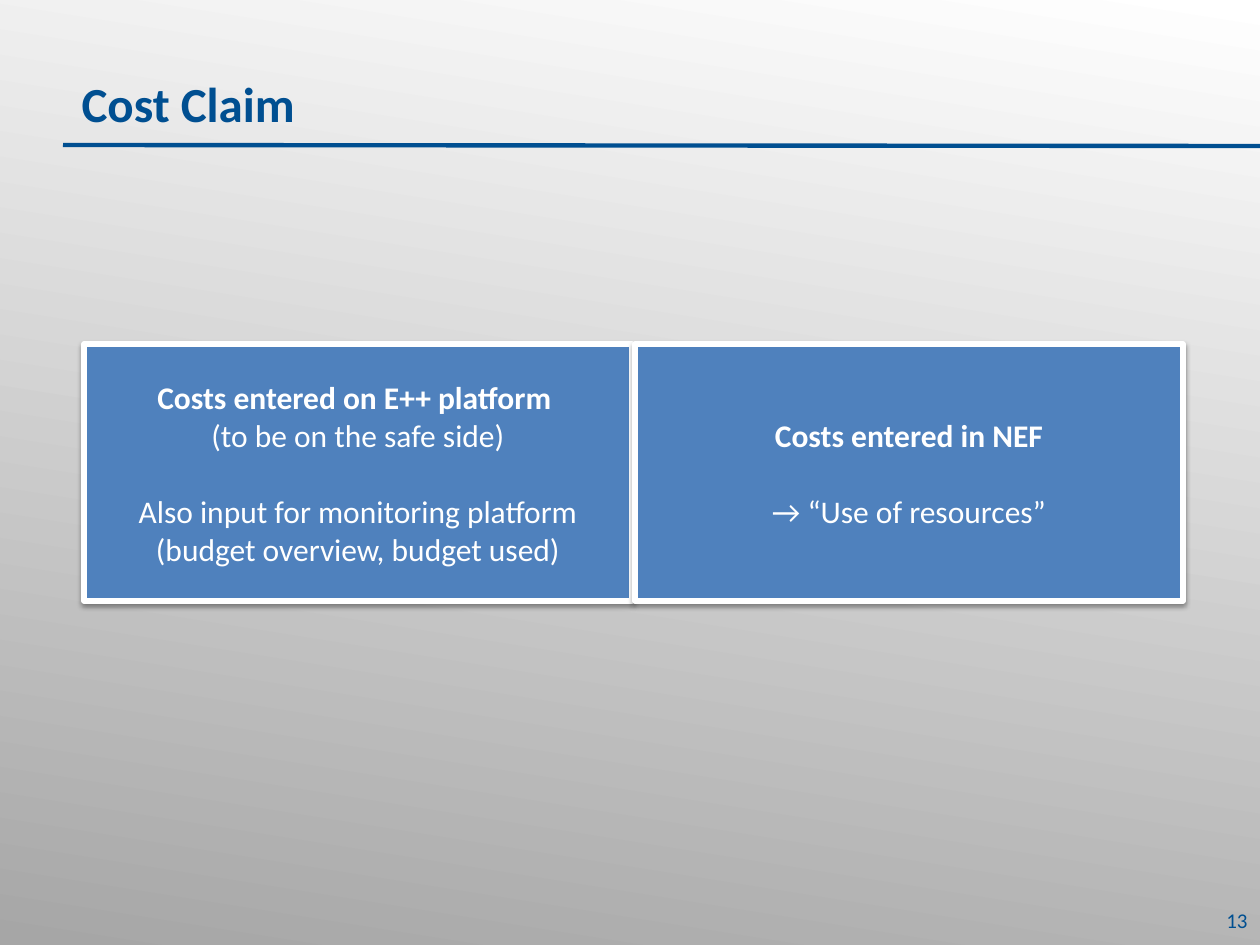
from dataclasses import dataclass

from lxml.etree import SubElement
from pptx import Presentation
from pptx.dml.color import RGBColor
from pptx.enum.shapes import MSO_CONNECTOR, MSO_SHAPE
from pptx.enum.text import MSO_ANCHOR, PP_ALIGN
from pptx.oxml.ns import qn
from pptx.util import Emu, Pt


@dataclass(frozen=True)
class Theme:
    font: str = "Calibri"
    navy: RGBColor = RGBColor(0x00, 0x4F, 0x91)
    blue: RGBColor = RGBColor(0x4F, 0x81, 0xBD)
    white: RGBColor = RGBColor(0xFF, 0xFF, 0xFF)
    gray: RGBColor = RGBColor(0xA6, 0xA6, 0xA6)
    title_size: Pt = Pt(28)
    body_size: Pt = Pt(18)
    number_size: Pt = Pt(12)
    line_gap: Pt = Pt(22)


THEME = Theme()
EMU_PER_PX = 914400 / 126
SLIDE_BOX = (0, 0, 1260, 945)
PANELS = [
    [
        ("Costs entered on E++ platform ", True, False),
        ("(to be on the safe side)", False, False),
        ("Also input for monitoring platform (budget overview, budget used)", False, True),
    ],
    [
        ("Costs entered in NEF", True, False),
        ("→ “Use of resources”", False, True),
    ],
]


def px(length):
    return Emu(round(length * EMU_PER_PX))


def emu_box(box):
    return [px(length) for length in box]


def style_font(paragraph, size, color, bold=False):
    font = paragraph.font
    font.name = THEME.font
    font.size = size
    font.color.rgb = color
    font.bold = bold


def add_soft_shadow(shape):
    effects = shape._element.spPr.find(qn("a:effectLst"))
    shadow = SubElement(
        effects, qn("a:outerShdw"), blurRad=str(Pt(3.1)), dist=str(Pt(1.6)),
        dir="5400000", rotWithShape="0",
    )
    color = SubElement(shadow, qn("a:srgbClr"), val="000000")
    SubElement(color, qn("a:alpha"), val="38000")


def add_backdrop(slide, box):
    backdrop = slide.shapes.add_shape(MSO_SHAPE.RECTANGLE, *emu_box(box))
    backdrop.shadow.inherit = False
    backdrop.line.fill.background()
    backdrop.fill.gradient()
    backdrop.fill.gradient_angle = 261
    for stop, color in zip(backdrop.fill.gradient_stops, (THEME.white, THEME.gray)):
        stop.color.rgb = color
    slide.shapes.title.element.addprevious(backdrop.element)


def add_header(slide, box, text):
    left, top, width, height = box
    title = slide.shapes.title
    title.left, title.top, title.width, title.height = emu_box(
        (left + 6, top, width - 58, height - 4)
    )
    title.text_frame.text = text
    title.text_frame.vertical_anchor = MSO_ANCHOR.TOP
    paragraph = title.text_frame.paragraphs[0]
    paragraph.alignment = PP_ALIGN.LEFT
    paragraph.line_spacing = 0.9
    paragraph.space_after = Pt(12)
    style_font(paragraph, THEME.title_size, THEME.navy, True)

    bottom = top + height
    rule = slide.shapes.add_connector(
        MSO_CONNECTOR.STRAIGHT, *emu_box((left - 0, bottom, left + width, bottom + 1))
    )
    rule.line.color.rgb = THEME.navy
    rule.line.width = Pt(2.5)
    SubElement(rule._element.spPr, qn("a:effectLst"))


def add_panel(slide, box, lines):
    panel = slide.shapes.add_shape(MSO_SHAPE.RECTANGLE, *emu_box(box))
    panel.shadow.inherit = False
    panel.fill.solid()
    panel.fill.fore_color.rgb = THEME.blue
    panel.line.color.rgb = THEME.white
    panel.line.width = Pt(3)
    add_soft_shadow(panel)
    frame = panel.text_frame
    frame.word_wrap = True
    frame.vertical_anchor = MSO_ANCHOR.MIDDLE
    for index, (text, bold, spaced) in enumerate(lines):
        paragraph = frame.add_paragraph() if index else frame.paragraphs[0]
        paragraph.text = text
        paragraph.alignment = PP_ALIGN.CENTER
        if spaced:
            paragraph.space_before = THEME.line_gap
        style_font(paragraph, THEME.body_size, THEME.white, bold)


def add_panel_row(slide, box, panels):
    left, top, width, height = box
    gap = 3
    panel_width = (width - gap * (len(panels) - 1)) // len(panels)
    for index, lines in enumerate(panels):
        panel_left = left + index * (panel_width + gap)
        add_panel(slide, (panel_left, top, panel_width, height), lines)


def add_slide_number(slide, box, number):
    text_box = slide.shapes.add_textbox(*emu_box(box))
    frame = text_box.text_frame
    frame.word_wrap = True
    frame.vertical_anchor = MSO_ANCHOR.MIDDLE
    paragraph = frame.paragraphs[0]
    paragraph.text = number
    paragraph.alignment = PP_ALIGN.RIGHT
    style_font(paragraph, THEME.number_size, THEME.navy)


def main():
    presentation = Presentation()
    presentation.slide_width, presentation.slide_height = emu_box(SLIDE_BOX[2:])
    slide = presentation.slides.add_slide(presentation.slide_layouts[5])
    add_backdrop(slide, SLIDE_BOX)
    add_header(slide, (63, 74, 1197, 71), "Cost Claim")
    add_slide_number(slide, (966, 895, 294, 50), "13")
    add_panel_row(slide, (84, 344, 1099, 257), PANELS)
    presentation.save("out.pptx")


if __name__ == "__main__":
    main()
